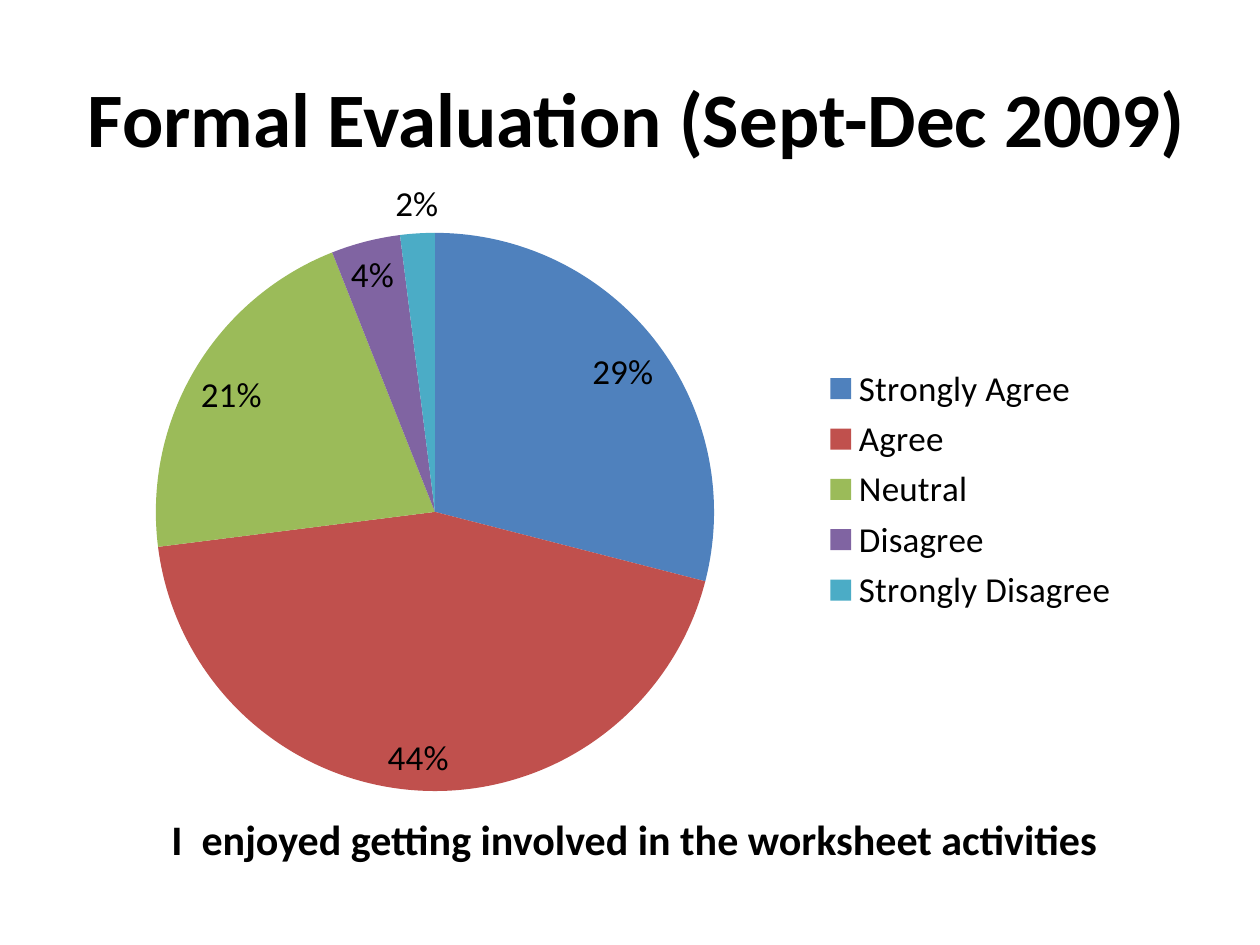
from dataclasses import dataclass

from lxml import etree
from pptx import Presentation
from pptx.chart import data as chart_data
from pptx.dml import color
from pptx.enum import chart as charts, text
from pptx.oxml import ns
from pptx.util import Inches, Pt


@dataclass(frozen=True)
class Theme:
    font: str = "Calibri"
    ink: str = "000000"
    slices: tuple = ("4F81BD", "C0504D", "9BBB59", "8064A2", "4BACC6")
    title_size: int = 44
    caption_size: int = 24
    chart_size: int = 20


THEME = Theme()
RESPONSES = {
    "Strongly Agree": 0.29,
    "Agree": 0.44,
    "Neutral": 0.21,
    "Disagree": 0.04,
    "Strongly Disagree": 0.02,
}


def style_font(font, size, bold=False):
    font.name = THEME.font
    font.size = Pt(size)
    font.bold = bold
    font.color.rgb = color.RGBColor.from_string(THEME.ink)


def write_heading(shape, wording, size):
    frame = shape.text_frame
    frame.word_wrap = True
    frame.text = wording
    paragraph = frame.paragraphs[0]
    paragraph.alignment = text.PP_ALIGN.CENTER
    style_font(paragraph.font, size, bold=True)
    return frame


def add_title(slide, wording):
    title = slide.shapes.title
    title.left, title.top = Inches(0.5), Inches(0.3)
    title.width, title.height = Inches(9.11), Inches(1.25)
    frame = write_heading(title, wording, THEME.title_size)
    frame.vertical_anchor = text.MSO_ANCHOR.MIDDLE


def add_caption(slide, wording):
    caption = slide.shapes.add_textbox(
        Inches(0.31), Inches(6.41), Inches(9.45), Inches(0.5))
    frame = write_heading(caption, wording, THEME.caption_size)
    frame.auto_size = text.MSO_AUTO_SIZE.SHAPE_TO_FIT_TEXT


def place_plot(chart, **fractions):
    plot_area = chart.plots[0]._element.getparent()
    for old_layout in plot_area.findall(ns.qn("c:layout")):
        plot_area.remove(old_layout)
    layout = etree.Element(ns.qn("c:layout"))
    manual = etree.SubElement(layout, ns.qn("c:manualLayout"))
    settings = {"layoutTarget": "inner", "xMode": "edge", "yMode": "edge", **fractions}
    for name, value in settings.items():
        etree.SubElement(manual, ns.qn(f"c:{name}")).set("val", str(value))
    plot_area.insert(0, layout)


def add_pie(slide, responses):
    data = chart_data.CategoryChartData(number_format="0%")
    data.categories = list(responses)
    data.add_series("Series 1", list(responses.values()))
    chart = slide.shapes.add_chart(
        charts.XL_CHART_TYPE.PIE,
        Inches(0.47), Inches(1.33), Inches(8.52), Inches(5.11), data).chart
    chart.has_title = False
    style_font(chart.font, THEME.chart_size)
    chart.has_legend = True
    chart.legend.position = charts.XL_LEGEND_POSITION.RIGHT
    chart.legend.include_in_layout = False
    style_font(chart.legend.font, THEME.chart_size)

    plot = chart.plots[0]
    plot.vary_by_categories = True
    for index, slice_color in enumerate(THEME.slices):
        fill = plot.series[0].points[index].format.fill
        fill.solid()
        fill.fore_color.rgb = color.RGBColor.from_string(slice_color)

    plot.has_data_labels = True
    labels = plot.data_labels
    labels.show_value = True
    labels.show_percentage = False
    labels.number_format = "0%"
    labels.number_format_is_linked = False
    labels.position = charts.XL_LABEL_POSITION.BEST_FIT
    style_font(labels.font, THEME.chart_size)
    place_plot(chart, x=0.09, y=0.1, w=0.52, h=0.87)


def main():
    presentation = Presentation()
    presentation.slide_width = Inches(10)
    presentation.slide_height = Inches(7.5)
    slide = presentation.slides.add_slide(presentation.slide_layouts[5])
    add_title(slide, "Formal Evaluation (Sept-Dec 2009)")
    add_caption(slide, "I  enjoyed getting involved in the worksheet activities")
    add_pie(slide, RESPONSES)
    presentation.save("out.pptx")


if __name__ == "__main__":
    main()
